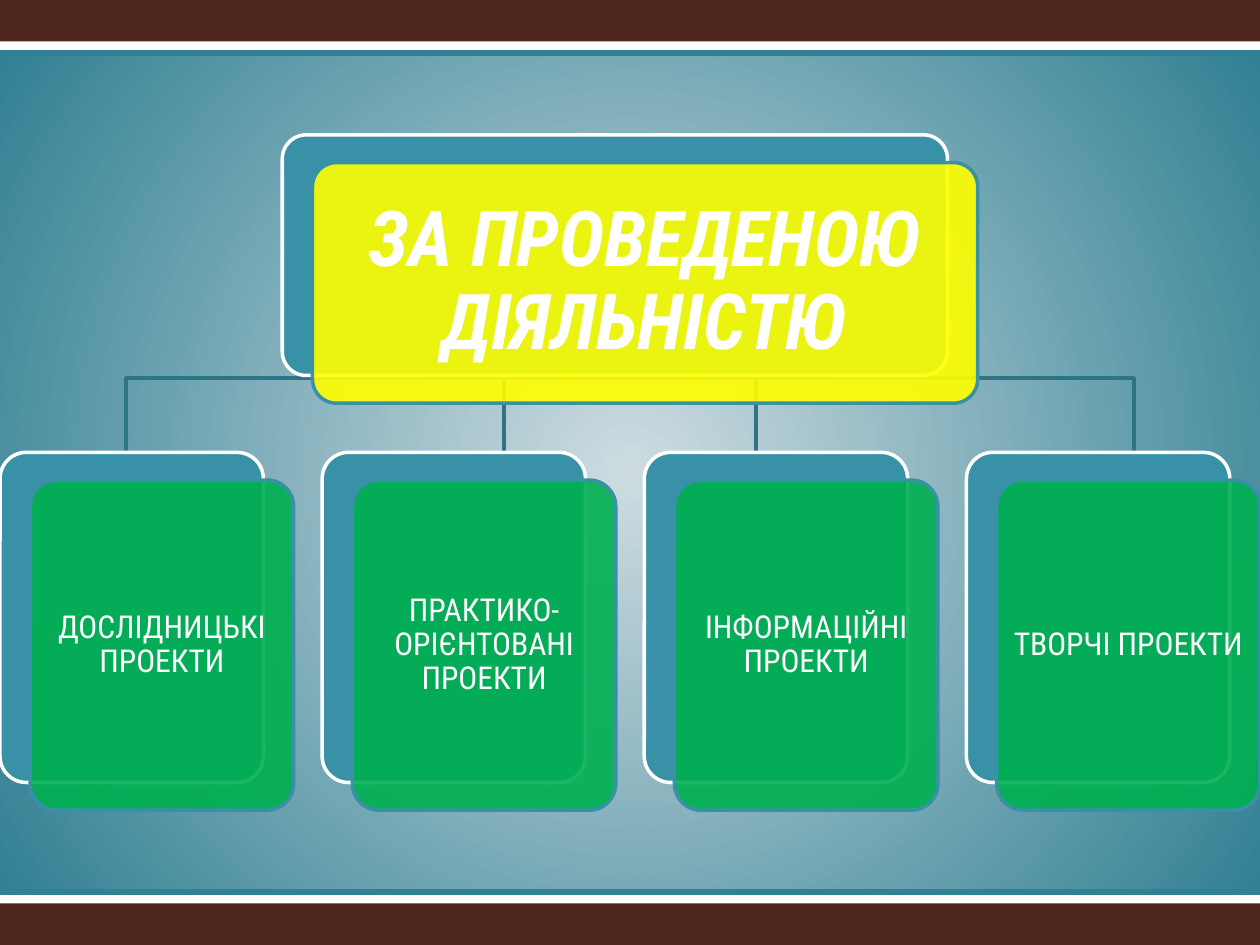
from lxml import etree
from pptx import Presentation, util as u
from pptx.dml.color import RGBColor
from pptx.enum import shapes, text
from pptx.oxml.ns import qn

WHITE = RGBColor(0xFF, 0xFF, 0xFF)
BROWN = RGBColor(0x4F, 0x27, 0x1C)
PALE = RGBColor(0xCE, 0xDC, 0xE1)
TEAL = RGBColor(0x31, 0x80, 0x93)
DARK_TEAL = RGBColor(0x2D, 0x74, 0x86)
CARD_BLUE = RGBColor(0x38, 0x91, 0xA7)
YELLOW = RGBColor(0xFF, 0xFF, 0x00)
GREEN = RGBColor(0x00, 0xB0, 0x50)

FONT = "Roboto Condensed"
WIDTH, HEIGHT = 10, 7.5
BAND, EDGE = 0.33, 0.42  # brown band height, inset of the gradient panel
SHIFT_X, SHIFT_Y = 0.24, 0.22  # offset of a front card from its back card
HEADING = "ЗА ПРОВЕДЕНОЮ ДІЯЛЬНІСТЮ"
PROJECTS = [
    "ДОСЛІДНИЦЬКІ ПРОЕКТИ",
    "ПРАКТИКО-ОРІЄНТОВАНІ ПРОЕКТИ",
    "ІНФОРМАЦІЙНІ ПРОЕКТИ",
    "ТВОРЧІ ПРОЕКТИ",
]


def inches(box):
    return [u.Inches(length) for length in box]


def add_panel(page, kind, box, fill, line=None):
    panel = page.shapes.add_shape(kind, *inches(box))
    panel.shadow.inherit = False
    panel.fill.solid()
    panel.fill.fore_color.rgb = fill
    if line is None:
        panel.line.fill.background()
    else:
        panel.line.color.rgb = line
        panel.line.width = u.Pt(2)
    return panel


def add_backdrop(page, box):
    """Radial panel with edge lines, and brown bands above and below."""
    left, top, width, height = box
    bottom = top + height
    rect = shapes.MSO_SHAPE.RECTANGLE
    panel = add_panel(page, rect, (left, top + EDGE, width, height - 2 * EDGE), PALE)
    panel.fill.gradient()
    for stop, colour, place in zip(panel.fill.gradient_stops, (PALE, TEAL), (0, 1)):
        stop.color.rgb = colour
        stop.position = place
    gradient = panel.fill._xPr.find(qn("a:gradFill"))
    gradient.remove(gradient.find(qn("a:lin")))
    path = etree.SubElement(gradient, qn("a:path"), {"path": "circle"})
    etree.SubElement(path, qn("a:fillToRect"), dict.fromkeys("ltrb", "50000"))

    for band_top in (top, bottom - BAND):
        add_panel(page, rect, (left, band_top, width, BAND), BROWN)
    for y in (top + EDGE, bottom - EDGE):
        edge = page.shapes.add_connector(
            shapes.MSO_CONNECTOR.STRAIGHT, *inches((left, y, left + width, y)))
        edge.line.color.rgb = TEAL
        edge.line.width = u.Pt(3)
        etree.SubElement(edge._element.spPr, qn("a:effectLst"))


def add_branch(page, start, end):
    """Stepped line that turns two thirds of the way down."""
    (x1, y1), (x2, y2) = start, end
    turn = y1 + (y2 - y1) * 0.67
    builder = page.shapes.build_freeform(x1, y1, scale=u.Inches(1))
    builder.add_line_segments([(x1, turn), (x2, turn), (x2, y2)], close=False)
    branch = builder.convert_to_shape()
    branch.shadow.inherit = False
    branch.fill.background()
    branch.line.color.rgb = DARK_TEAL
    branch.line.width = u.Pt(2)


def add_card(page, box, fill):
    """Back card and translucent front card; returns the front card's box."""
    left, top, width, height = box
    front_box = (left + SHIFT_X, top + SHIFT_Y, width, height)
    rounded = shapes.MSO_SHAPE.ROUNDED_RECTANGLE
    back = add_panel(page, rounded, box, CARD_BLUE, WHITE)
    front = add_panel(page, rounded, front_box, fill, CARD_BLUE)
    for card in (back, front):
        card.adjustments[0] = 0.1
    colour = front.fill._xPr.find(qn("a:solidFill"))[0]
    etree.SubElement(colour, qn("a:alpha"), {"val": "90000"})
    return front_box


def write_label(label, box, words, size, inset, strong=False):
    label.left, label.top, label.width, label.height = inches(box)
    frame = label.text_frame
    frame.word_wrap = True
    frame.auto_size = text.MSO_AUTO_SIZE.NONE
    frame.vertical_anchor = text.MSO_ANCHOR.MIDDLE
    frame.margin_left = frame.margin_right = u.Inches(inset)
    frame.margin_top = frame.margin_bottom = u.Inches(inset)
    para = frame.paragraphs[0]
    para.text = words
    para.alignment = text.PP_ALIGN.CENTER
    para.line_spacing = 0.9
    para.font.name = FONT
    para.font.size = u.Pt(size)
    para.font.bold = para.font.italic = strong
    para.font.color.rgb = WHITE


def add_hierarchy(page, box):
    """Heading card over a row of equally spaced project cards."""
    left, top, width, height = box
    root = (left + 0.224 * width, top, 0.528 * width, 1.91)
    card_width, card_height = 0.209 * width, 2.62
    row_top = top + height - SHIFT_Y - card_height
    step = (width - SHIFT_X - card_width) / (len(PROJECTS) - 1)
    columns = [left + i * step for i in range(len(PROJECTS))]

    # Branches lie behind the cards
    start = (root[0] + root[2] / 2, root[1] + root[3])
    for x in reversed(columns):
        add_branch(page, start, (x + card_width / 2, row_top))

    # Heading, with the title lifted above its card
    title = page.shapes.title
    front_box = add_card(page, root, YELLOW)
    title._element.getparent().append(title._element)
    write_label(title, front_box, HEADING, 44, 0.18, strong=True)

    # Project cards
    for x, words in zip(columns, PROJECTS):
        front_box = add_card(page, (x, row_top, card_width, card_height), GREEN)
        label = page.shapes.add_textbox(*inches(front_box))
        write_label(label, front_box, words, 18, 0.07)


def main():
    deck = Presentation()
    deck.slide_width, deck.slide_height = inches((WIDTH, HEIGHT))
    page = deck.slides.add_slide(deck.slide_layouts[5])
    page.background.fill.solid()
    page.background.fill.fore_color.rgb = WHITE
    add_backdrop(page, (0, 0, WIDTH, HEIGHT))
    add_hierarchy(page, (0, 1.07, WIDTH, 5.36))
    deck.save("out.pptx")


if __name__ == "__main__":
    main()
